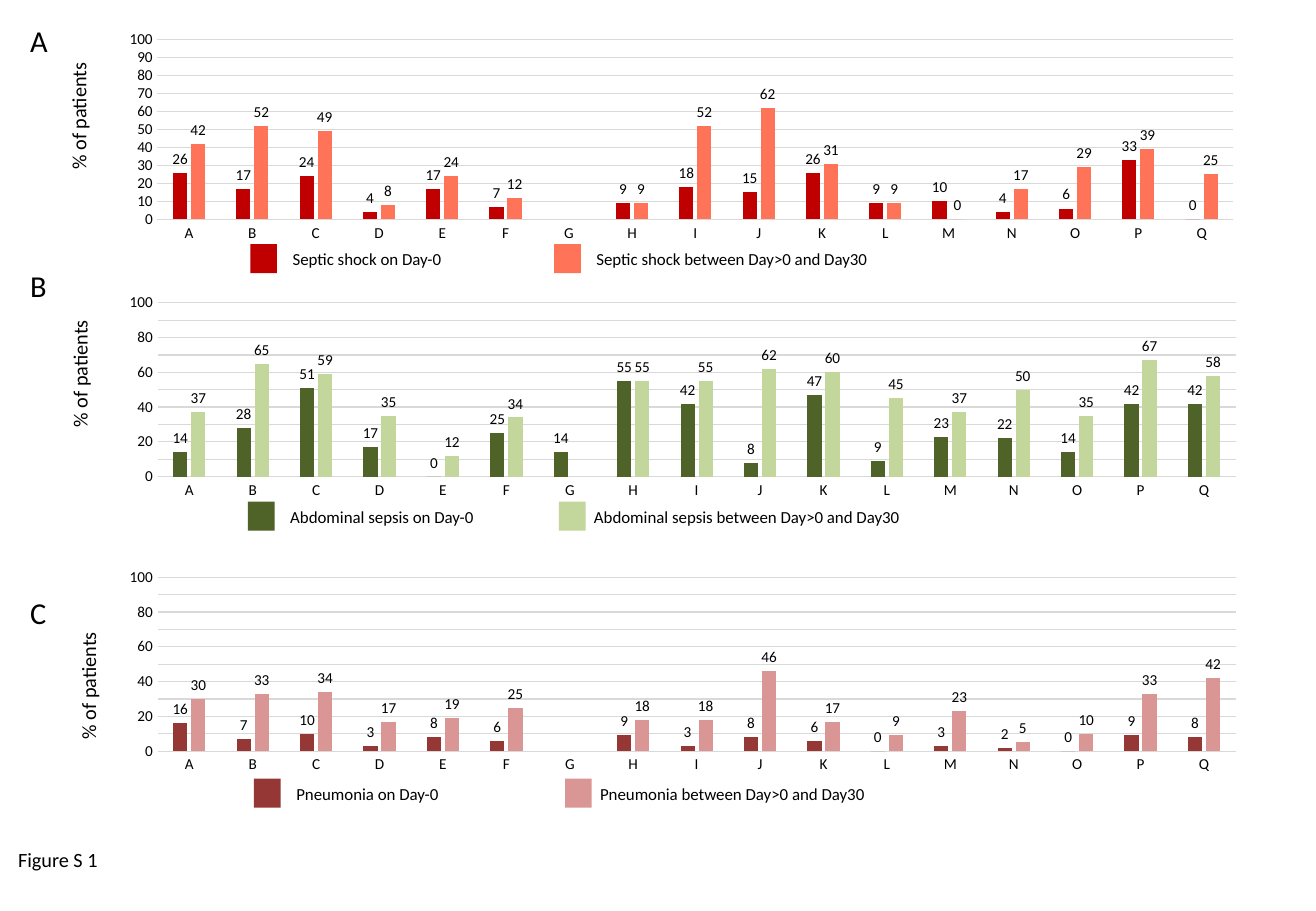
from pptx import Presentation
from pptx.chart.data import CategoryChartData
from pptx.dml.color import RGBColor
from pptx.enum.chart import XL_CHART_TYPE, XL_LABEL_POSITION, XL_TICK_MARK
from pptx.enum.shapes import MSO_SHAPE
from pptx.oxml import parse_xml
from pptx.oxml.ns import nsdecls
from pptx.util import Pt

PX = 9144
FACE = "Calibri"
BLACK = RGBColor(0, 0, 0)
GRID = RGBColor(0xD9, 0xD9, 0xD9)
RED = RGBColor(0xC0, 0x00, 0x00)
CORAL = RGBColor(0xFF, 0x73, 0x59)
OLIVE = RGBColor(0x4F, 0x62, 0x28)
LIME = RGBColor(0xC3, 0xD6, 0x9B)
MAROON = RGBColor(0x95, 0x37, 0x35)
PINK = RGBColor(0xD9, 0x96, 0x94)

deck = Presentation()
deck.slide_width, deck.slide_height = 1083 * PX, 750 * PX
slide = deck.slides.add_slide(deck.slide_layouts[6])


def style(font, size):
    font.size = Pt(size)
    font.name = FACE
    font.color.rgb = BLACK


def write(text, x, y, w, h, size, turn=0):
    box = slide.shapes.add_textbox(x * PX, y * PX, w * PX, h * PX)
    box.rotation = turn
    para = box.text_frame.paragraphs[0]
    para.text = text
    style(para.font, size)


panels = [
    {"mark": "A", "mark_y": 13, "chart": (22, 946, 213), "axis": (10, 80), "key_y": 201,
     "series": [
         ("%shockD0", RED, [26, 17, 24, 4, 17, 7, None, 9, 18, 15, 26, 9, 10, 4, 6, 33, 0]),
         ("%ShockD30", CORAL, [42, 52, 49, 8, 24, 12, None, 9, 52, 62, 31, 9, 0, 17, 29, 39, 25])],
     "keys": [("Septic shock on Day-0", 206, 231, 150),
              ("Septic shock between Day>0 and Day30", 456, 481, 260)]},
    {"mark": "B", "mark_y": 215, "chart": (239, 948, 206), "axis": (11, 292), "key_y": 413,
     "series": [
         ("%IAID0", OLIVE, [14, 28, 51, 17, 0, 25, 14, 55, 42, 8, 47, 9, 23, 22, 14, 42, 42]),
         ("%IAID30", LIME, [37, 65, 59, 35, 12, 34, None, 55, 55, 62, 60, 45, 37, 50, 35, 67, 58])],
     "keys": [("Abdominal sepsis on Day-0", 204, 229, 175),
              ("Abdominal sepsis between Day>0 and Day30", 460, 479, 280)]},
    {"mark": "C", "mark_y": 484, "chart": (465, 948, 206), "axis": (18, 549), "key_y": 641,
     "series": [
         ("%REspD0", MAROON, [16, 7, 10, 3, 8, 6, None, 9, 3, 8, 6, 0, 3, 2, 0, 9, 8]),
         ("%RespD30", PINK, [30, 33, 34, 17, 19, 25, None, 18, 18, 46, 17, 9, 23, 5, 10, 33, 42])],
     "keys": [("Pneumonia on Day-0", 209, 234, 150),
              ("Pneumonia between Day>0 and Day30", 465, 484, 250)]},
]

for panel in panels:
    write(panel["mark"], 15, panel["mark_y"], 35, 40, 18)
    write("% of patients", *panel["axis"], 109, 30, 12, 270)

    data = CategoryChartData(number_format="0")
    data.categories = list("ABCDEFGHIJKLMNOPQ")
    for name, color, vals in panel["series"]:
        data.add_series(name, vals)
    top, wide, high = panel["chart"]
    chart = slide.shapes.add_chart(
        XL_CHART_TYPE.COLUMN_CLUSTERED, 88 * PX, top * PX, wide * PX, high * PX, data).chart
    chart.has_title = False
    chart.has_legend = False
    style(chart.font, 10)

    plot = chart.plots[0]
    plot.gap_width, plot.overlap = 219, -27
    plot.vary_by_categories = False
    for bars, (name, color, vals) in zip(plot.series, panel["series"]):
        bars.format.fill.solid()
        bars.format.fill.fore_color.rgb = color
        tags = bars.data_labels
        tags.show_value = True
        tags.position = XL_LABEL_POSITION.OUTSIDE_END
        tags.number_format, tags.number_format_is_linked = "0", False
        style(tags.font, 9)

    cats, scale = chart.category_axis, chart.value_axis
    for axis in (cats, scale):
        axis.major_tick_mark = axis.minor_tick_mark = XL_TICK_MARK.NONE
        style(axis.tick_labels.font, 9)
    scale.minimum_scale, scale.maximum_scale, scale.major_unit = 0, 100, 10
    scale.tick_labels.number_format = "0"
    scale.tick_labels.number_format_is_linked = False
    scale.format.line.fill.background()
    for line in (cats.format.line, scale.major_gridlines.format.line):
        line.color.rgb = GRID
        line.width = Pt(0.75)

    area = chart._chartSpace.chart.plotArea
    for old in area.findall("{*}layout"):
        area.remove(old)
    area.insert(0, parse_xml(
        f'<c:layout {nsdecls("c")}><c:manualLayout><c:layoutTarget val="inner"/>'
        '<c:xMode val="edge"/><c:yMode val="edge"/><c:x val="0.044"/><c:y val="0.05"/>'
        '<c:w val="0.936"/><c:h val="0.695"/></c:manualLayout></c:layout>'))

    for (name, color, vals), (label, x, text_x, width) in zip(panel["series"], panel["keys"]):
        key = slide.shapes.add_shape(
            MSO_SHAPE.RECTANGLE, x * PX, panel["key_y"] * PX, 22 * PX, 24 * PX)
        key.shadow.inherit = False
        key.fill.solid()
        key.fill.fore_color.rgb = color
        key.line.fill.background()
        write(label, text_x, panel["key_y"] - 1, width, 27, 10)

write("Figure S 1", 5, 693, 1061, 30, 12)
deck.save("out.pptx")
